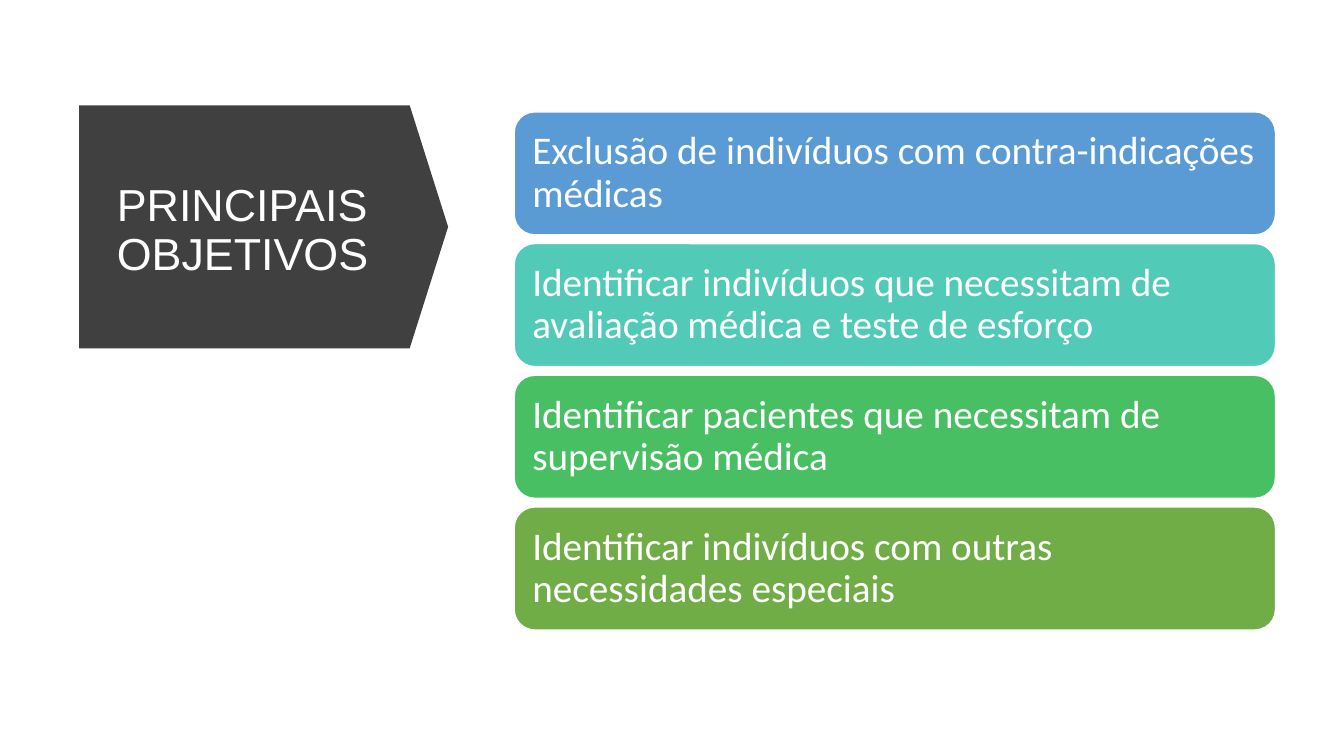
from dataclasses import dataclass

from pptx import Presentation
from pptx.dml.color import RGBColor
from pptx.enum.shapes import MSO_SHAPE
from pptx.enum.text import MSO_ANCHOR, PP_ALIGN
from pptx.shapes.autoshape import Shape
from pptx.slide import Slide
from pptx.util import Inches, Pt

COLORS = {
    "white": "FFFFFF",
    "charcoal": "404040",
    "blue": "5B9BD5",
    "turquoise": "52CAB8",
    "green": "49BF64",
    "olive": "70AD47",
}
FIRST_TOP, LAST_TOP = 1.11, 5.03


@dataclass
class Objective:
    text: str
    color: str


OBJECTIVES = [
    Objective("Exclusão de indivíduos com contra-indicações médicas", "blue"),
    Objective("Identificar indivíduos que necessitam de avaliação médica e teste de esforço", "turquoise"),
    Objective("Identificar pacientes que necessitam de supervisão médica", "green"),
    Objective("Identificar indivíduos com outras necessidades especiais", "olive"),
]


def rgb(name: str) -> RGBColor:
    return RGBColor.from_string(COLORS[name])


def write_text(shape: Shape, text: str, *, size: float, font: str,
               inset_x: float, inset_y: float, color: str = "white") -> None:
    frame = shape.text_frame
    frame.word_wrap = True
    frame.vertical_anchor = MSO_ANCHOR.MIDDLE
    frame.margin_left = frame.margin_right = Inches(inset_x)
    frame.margin_top = frame.margin_bottom = Inches(inset_y)
    paragraph = frame.paragraphs[0]
    paragraph.alignment = PP_ALIGN.LEFT
    paragraph.line_spacing = 0.9
    run = paragraph.add_run()
    run.text = text
    run.font.size = Pt(size)
    run.font.name = font
    run.font.color.rgb = rgb(color)


def add_filled_shape(slide: Slide, kind: MSO_SHAPE, left: float, top: float,
                     width: float, height: float, color: str) -> Shape:
    shape = slide.shapes.add_shape(
        kind, Inches(left), Inches(top), Inches(width), Inches(height))
    shape.shadow.inherit = False
    shape.fill.solid()
    shape.fill.fore_color.rgb = rgb(color)
    shape.line.fill.background()
    return shape


def add_heading(slide: Slide) -> None:
    # Arrow turned to point at the objectives
    arrow = add_filled_shape(slide, MSO_SHAPE.DOWN_ARROW, 1.41, 0.42, 2.41, 3.66, "charcoal")
    arrow.rotation = 270
    arrow.adjustments[0] = 1
    arrow.adjustments[1] = 0.158

    # Upright heading over the arrow
    heading = slide.shapes.add_textbox(Inches(1.06), Inches(1.32), Inches(2.92), Inches(1.95))
    write_text(heading, "PRINCIPAIS OBJETIVOS", size=32, font="Arial", inset_x=0.1, inset_y=0.05)


def add_objective(slide: Slide, objective: Objective, top: float) -> None:
    bar = add_filled_shape(slide, MSO_SHAPE.ROUNDED_RECTANGLE, 5.1, top, 7.55, 1.22, objective.color)
    bar.line.color.rgb = rgb("white")
    bar.line.width = Pt(1)
    write_text(bar, objective.text, size=28, font="Calibri", inset_x=0.12, inset_y=0.12)


def main() -> None:
    presentation = Presentation()
    presentation.slide_width = Inches(13.33)
    presentation.slide_height = Inches(7.5)
    slide = presentation.slides.add_slide(presentation.slide_layouts[6])

    add_heading(slide)

    # Evenly spaced objectives
    pitch = (LAST_TOP - FIRST_TOP) / (len(OBJECTIVES) - 1)
    for index, objective in enumerate(OBJECTIVES):
        add_objective(slide, objective, FIRST_TOP + index * pitch)

    presentation.save("out.pptx")


if __name__ == "__main__":
    main()
